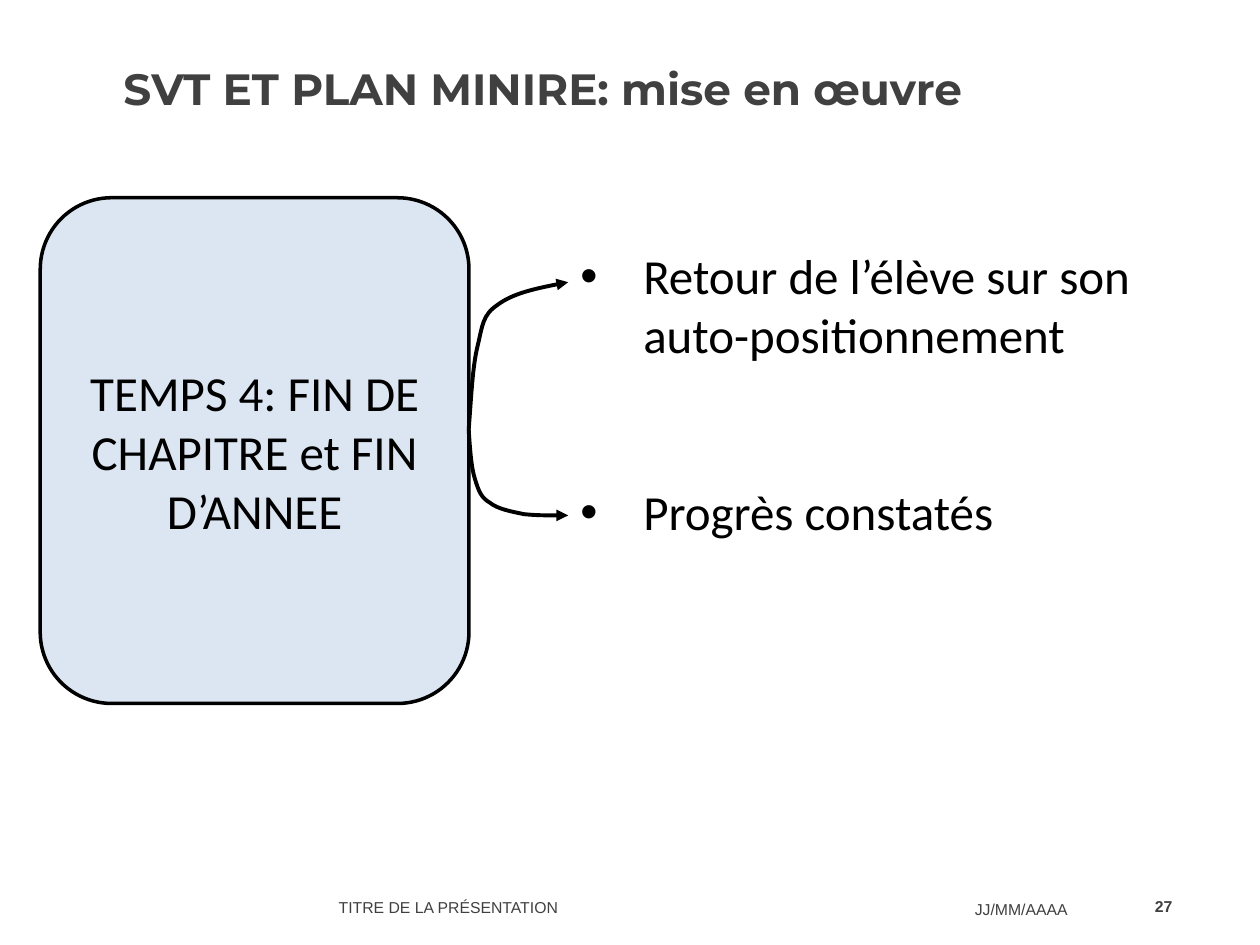
from dataclasses import dataclass

from lxml import etree
from pptx import Presentation
from pptx.dml.color import RGBColor
from pptx.enum.shapes import MSO_SHAPE
from pptx.enum.text import MSO_ANCHOR, PP_ALIGN
from pptx.oxml.ns import qn
from pptx.util import Pt

ROUNDED = MSO_SHAPE.ROUNDED_RECTANGLE
TOP, MIDDLE = MSO_ANCHOR.TOP, MSO_ANCHOR.MIDDLE
LEFT, CENTER, RIGHT = PP_ALIGN.LEFT, PP_ALIGN.CENTER, PP_ALIGN.RIGHT


@dataclass
class Theme:
    ink: RGBColor = RGBColor(0, 0, 0)
    grey: RGBColor = RGBColor(0x40, 0x40, 0x40)
    panel: RGBColor = RGBColor(0xDC, 0xE6, 0xF2)
    title_size: int = 25
    body_size: int = 28
    footer_size: int = 9


theme = Theme()


def style(p, font, size, color, bold=False, align=LEFT):
    p.alignment = align
    for r in p.runs:
        r.font.name = font
        r.font.size = Pt(size)
        r.font.bold = bold
        r.font.color.rgb = color


def add_text(box, text, anchor=MIDDLE, top=3.6, bottom=3.6):
    s = slide.shapes.add_textbox(*[Pt(v) for v in box])
    tf = s.text_frame
    tf.word_wrap = True
    tf.vertical_anchor = anchor
    tf.margin_top, tf.margin_bottom = Pt(top), Pt(bottom)
    tf.text = text
    return tf


prs = Presentation()
prs.slide_width, prs.slide_height = Pt(720), Pt(540)
slide = prs.slides.add_slide(prs.slide_layouts[6])

# Footer: presentation title, date, page number
footers = [
    ("TITRE DE LA PRÉSENTATION", (186.5, 484, 279.5, 53), 19, False, LEFT),
    ("JJ/MM/AAAA", (550, 503.5, 91.5, 28.5), 7, False, LEFT),
    ("27", (641.5, 503.5, 35.5, 28.5), 3.6, True, RIGHT),
]
for text, box, top, bold, align in footers:
    tf = add_text(box, text, top=top)
    style(tf.paragraphs[0], "Arial", theme.footer_size, theme.grey, bold, align)

# Title, raised within its box
tf = add_text((63.5, 14.5, 620.5, 101.5), "SVT ET PLAN MINIRE: mise en œuvre", bottom=34)
style(tf.paragraphs[0], "Montserrat", theme.title_size, theme.grey, bold=True)

# Stage panel
s = slide.shapes.add_shape(ROUNDED, Pt(23), Pt(113), Pt(245), Pt(289))
s.shadow.inherit = False
s.fill.solid()
s.fill.fore_color.rgb = theme.panel
s.line.color.rgb = theme.ink
s.line.width = Pt(2)
tf = s.text_frame
tf.word_wrap = True
tf.vertical_anchor = MIDDLE
tf.text = "TEMPS 4: FIN DE CHAPITRE et FIN D’ANNEE"
style(tf.paragraphs[0], "Calibri", theme.body_size, theme.ink, align=CENTER)

# Bulleted outcomes
outcomes = ["Retour de l’élève sur son auto-positionnement", "Progrès constatés"]
tf = add_text((324.5, 137, 352.5, 175), "\n".join(outcomes), TOP)
for i, p in enumerate(tf.paragraphs):
    if i:
        p.space_before = Pt(67.5)
    pPr = p._p.get_or_add_pPr()
    pPr.set("marL", str(Pt(36)))
    pPr.set("indent", str(-Pt(36)))
    etree.SubElement(pPr, qn("a:buFont"), typeface="Arial")
    etree.SubElement(pPr, qn("a:buChar"), char="•")
    style(p, "Calibri", theme.body_size, theme.ink)

# Curved arrows from the panel to each outcome, three points per Bézier segment
start = (267.84, 245.5)
curves = [
    [(269.3, 227.5), (270, 209.5), (272.9, 198), (275.8, 185.8), (275.8, 180),
     (284.4, 174.2), (293, 167.8), (308.9, 164.2), (324.7, 161.3)],
    [(268.6, 256.3), (269.3, 267.1), (271.4, 273.6), (273.6, 280.8), (275, 284.4),
     (280, 287.3), (284.4, 290.9), (292.3, 292.3), (299.5, 293.8),
     (306.7, 294.5), (316, 294.5), (324.7, 294.5)],
]
for points in curves:
    fb = slide.shapes.build_freeform(Pt(start[0]), Pt(start[1]))
    fb.add_line_segments([(Pt(x), Pt(y)) for x, y in points], close=False)
    s = fb.convert_to_shape()
    s.shadow.inherit = False
    s.fill.background()
    s.line.color.rgb = theme.ink
    s.line.width = Pt(2.25)
    etree.SubElement(s.line._get_or_add_ln(), qn("a:tailEnd"), type="triangle")
    path = s._element.find(".//" + qn("a:path"))
    for i, segment in enumerate(path.findall(qn("a:lnTo"))):
        if i % 3 == 0:
            bezier = etree.SubElement(path, qn("a:cubicBezTo"))
        bezier.append(segment[0])
        path.remove(segment)

prs.save("out.pptx")
